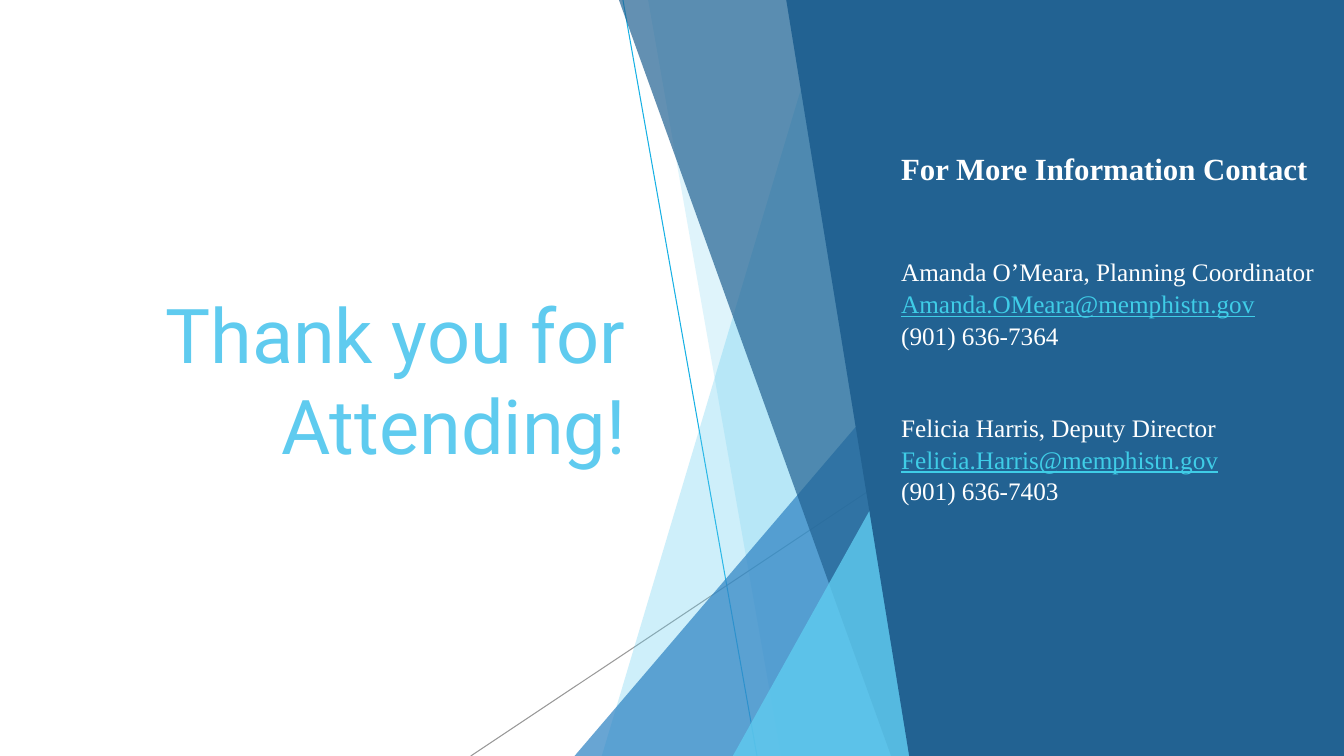
from dataclasses import dataclass

from lxml import etree
from pptx import Presentation
from pptx import util as u
from pptx.dml import color
from pptx.enum import shapes, text
from pptx.oxml import ns


@dataclass(frozen=True)
class Theme:
    sky: str = "5FCBEF"
    cyan: str = "17B0E4"
    blue: str = "2E83C3"
    navy: str = "226292"
    gray: str = "808080"
    white: str = "FFFFFF"
    link: str = "3FCDE7"
    sans: str = "Roboto"
    serif: str = "Times New Roman"
    title: int = 54
    head: int = 22
    body: int = 18


@dataclass(frozen=True)
class Ray:
    start: tuple[float, float]
    end: tuple[float, float]
    hue: str
    alpha: int = 100


@dataclass(frozen=True)
class Band:
    """Slanted band: left edge at top and bottom, straight right edge."""
    top: float
    base: float
    right: float
    hue: str
    alpha: int = 100


@dataclass(frozen=True)
class Wedge:
    """Right triangle that stands on the bottom edge."""
    left: float
    top: float
    right: float
    hue: str
    alpha: int


@dataclass(frozen=True)
class Line:
    words: str
    hue: str
    size: int
    bold: bool = False
    under: bool = False
    before: float = 0
    after: float = 0


T = Theme()
COLS, ROWS = 160, 90
EDGE = 111.12  # right edge shared by the facets

RAYS = [
    Ray((74.16, 0), (90.12, ROWS), T.cyan),
    Ray((118.56, 48.36), (56.04, ROWS), T.gray, 80),
]
FACETS = [
    Band(98.52, 71.64, EDGE, T.sky, 30),
    Band(77.16, 93, EDGE, T.sky, 20),
    Wedge(68.4, 40, EDGE, T.blue, 72),
    Band(73.68, 106.08, EDGE, T.navy, 70),
    Wedge(87.24, 47.16, EDGE, T.sky, 80),
]
PANEL = Band(93.6, 108.24, COLS, T.navy)

PEOPLE = [
    ("Amanda O’Meara, Planning Coordinator",
     "Amanda.OMeara@memphistn.gov", "(901) 636-7364"),
    ("Felicia Harris, Deputy Director",
     "Felicia.Harris@memphistn.gov", "(901) 636-7403"),
]

deck = Presentation()
deck.slide_width, deck.slide_height = u.Inches(13.33), u.Inches(7.5)
slide = deck.slides.add_slide(deck.slide_layouts[1])


def col(n: float) -> int:
    return round(deck.slide_width * n / COLS)


def row(n: float) -> int:
    return round(deck.slide_height * n / ROWS)


def apply(target, values: dict) -> None:
    for name, value in values.items():
        setattr(target, name, value)


def tint(fill, hue: str, alpha: int) -> None:
    fill.solid()
    fill.fore_color.rgb = color.RGBColor.from_string(hue)
    if alpha < 100:
        node = fill._xPr.find(f".//{ns.qn('a:srgbClr')}")
        etree.SubElement(node, ns.qn("a:alpha"), val=str(alpha * 1000))


def paint(shape, hue: str, alpha: int) -> None:
    shape.shadow.inherit = False
    shape.line.fill.background()
    tint(shape.fill, hue, alpha)


def draw_ray(ray: Ray) -> None:
    (x1, y1), (x2, y2) = ray.start, ray.end
    link = slide.shapes.add_connector(
        shapes.MSO_CONNECTOR.STRAIGHT, col(x1), row(y1), col(x2), row(y2))
    link.line.width = u.Pt(0.75)
    tint(link.line.fill, ray.hue, ray.alpha)
    etree.SubElement(link._element.spPr, ns.qn("a:effectLst"))


def draw_band(band: Band) -> None:
    pen = slide.shapes.build_freeform(col(band.top), 0)
    pen.add_line_segments([
        (col(band.right), 0),
        (col(band.right), row(ROWS)),
        (col(band.base), row(ROWS)),
    ], close=True)
    paint(pen.convert_to_shape(), band.hue, band.alpha)


def draw_wedge(wedge: Wedge) -> None:
    shape = slide.shapes.add_shape(
        shapes.MSO_SHAPE.ISOSCELES_TRIANGLE, col(wedge.left), row(wedge.top),
        col(wedge.right - wedge.left), row(ROWS - wedge.top))
    shape.adjustments[0] = 1
    paint(shape, wedge.hue, wedge.alpha)


def place(holder, x: float, y: float, w: float, h: float, anchor):
    """Move a placeholder to the grid and bring it to the front."""
    apply(holder, {"left": col(x), "top": row(y),
                   "width": col(w), "height": row(h)})
    frame = holder.text_frame
    apply(frame, {"word_wrap": True, "vertical_anchor": anchor,
                  "auto_size": text.MSO_AUTO_SIZE.NONE})
    slide.shapes._spTree.append(holder._element)
    return frame


def write(par, line: Line, face: str, align, pitch: float) -> None:
    props = par._p.get_or_add_pPr()
    apply_indent = {"marL": "0", "indent": "0"}
    for name, value in apply_indent.items():
        props.set(name, value)
    etree.SubElement(props, ns.qn("a:buNone"))
    apply(par, {"alignment": align, "line_spacing": pitch,
                "space_before": u.Pt(line.before),
                "space_after": u.Pt(line.after)})
    run = par.add_run()
    run.text = line.words
    apply(run.font, {"name": face, "size": u.Pt(line.size),
                     "bold": line.bold, "underline": line.under})
    run.font.color.rgb = color.RGBColor.from_string(line.hue)


# Facets on the left of the panel
for ray in RAYS:
    draw_ray(ray)
for facet in FACETS:
    if isinstance(facet, Band):
        draw_band(facet)
    else:
        draw_wedge(facet)

# Title
frame = place(slide.shapes.title, 8.88, 16.8, 66.84, 56.52,
              text.MSO_ANCHOR.MIDDLE)
write(frame.paragraphs[0], Line("Thank you for Attending!", T.sky, T.title),
      T.sans, text.PP_ALIGN.RIGHT, 1.0)

# Contact panel
draw_band(PANEL)
lines = [Line("For More Information Contact", T.white, T.head,
              bold=True, after=6)]
for name, mail, phone in PEOPLE:
    lines += [Line(name, T.white, T.body, before=43),
              Line(mail, T.link, T.body, under=True),
              Line(phone, T.white, T.body)]
frame = place(slide.placeholders[1], 106.08, 17, 53.52, 46.68,
              text.MSO_ANCHOR.TOP)
for i, line in enumerate(lines):
    par = frame.add_paragraph() if i else frame.paragraphs[0]
    write(par, line, T.serif, text.PP_ALIGN.LEFT, 1.05)

deck.save("out.pptx")
